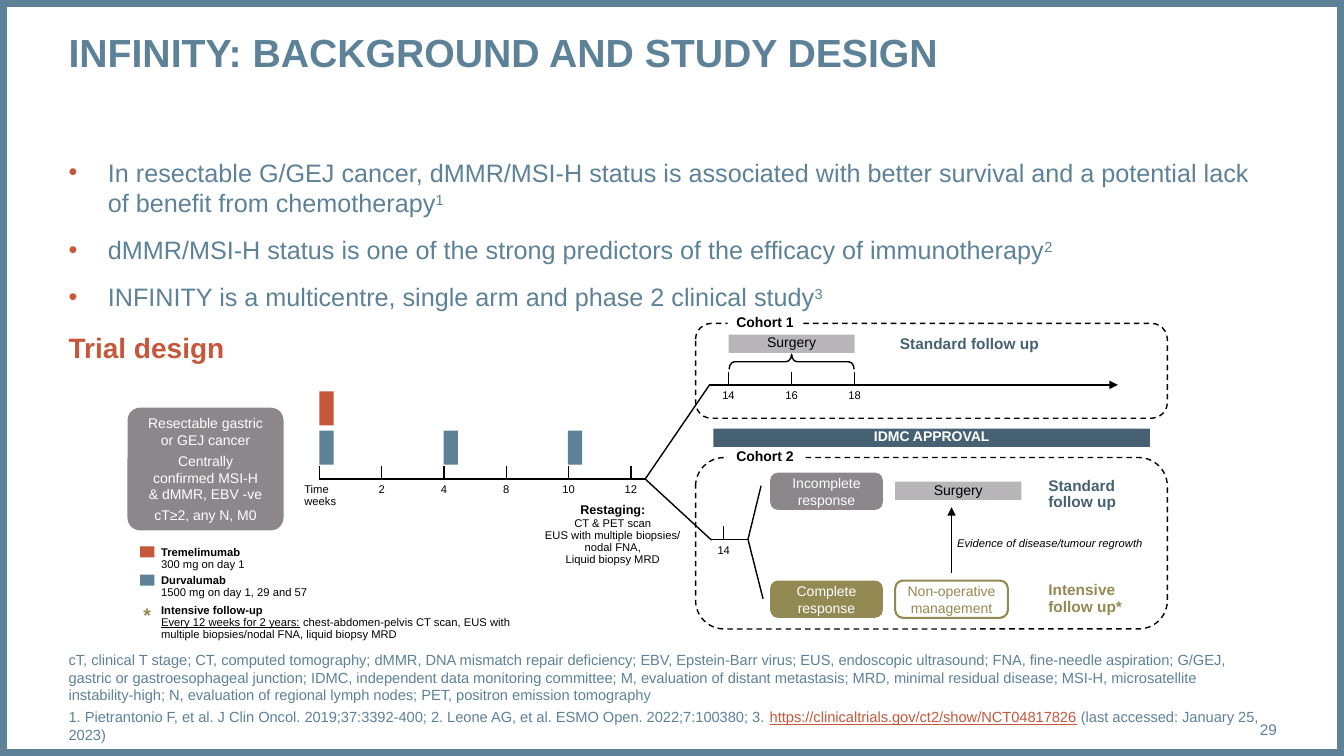
"""Build the INFINITY background and study design slide."""
from copy import deepcopy

from lxml import etree
from pptx import Presentation, util as u
from pptx.dml.color import RGBColor
from pptx.enum import dml, shapes, text
from pptx.oxml import ns

BLUE = RGBColor(0x5D, 0x82, 0x98)
NAVY = RGBColor(0x45, 0x61, 0x72)
RUST = RGBColor(0xC6, 0x57, 0x3B)
OLIVE = RGBColor(0x93, 0x89, 0x53)
GREY = RGBColor(0x8B, 0x87, 0x8B)
SILVER = RGBColor(0xB8, 0xB6, 0xB8)
BLACK = RGBColor(0, 0, 0)
WHITE = RGBColor(0xFF, 0xFF, 0xFF)

RECT = shapes.MSO_SHAPE.RECTANGLE
ROUND = shapes.MSO_SHAPE.ROUNDED_RECTANGLE
BRACE = shapes.MSO_SHAPE.RIGHT_BRACE
LEFT, CENTER, RIGHT = text.PP_ALIGN.LEFT, text.PP_ALIGN.CENTER, text.PP_ALIGN.RIGHT
MIDDLE = text.MSO_ANCHOR.MIDDLE

RAISED = {"raised": True}
BOLD, PLAIN = {"bold": True}, {}
SMALL = {"size": 8, "color": BLACK}
BODY = {"size": 18, "color": BLUE}
NOTE = {"size": 10.5, "color": BLUE}
BOX_TEXT = {"size": 10, "color": WHITE}
BAR_TEXT = {"size": 10, "color": BLACK}
HEADING = {"size": 11, "bold": True}
TIGHT = {"line_spacing": 0.9}
GAP = {"space_before": u.Pt(3)}

BULLETS = [
    [("In resectable G/GEJ cancer, dMMR/MSI-H status is associated with better survival "
      "and a potential lack of benefit from chemotherapy", PLAIN), ("1", RAISED)],
    [("dMMR/MSI-H status is one of the strong predictors of the efficacy of immunotherapy", PLAIN),
     ("2", RAISED)],
    [("INFINITY is a multicentre, single arm and phase 2 clinical study", PLAIN), ("3", RAISED)],
]
FOOTNOTES = [
    "cT, clinical T stage; CT, computed tomography; dMMR, DNA mismatch repair deficiency; EBV, "
    "Epstein-Barr virus; EUS, endoscopic ultrasound; FNA, fine-needle aspiration; G/GEJ, gastric or "
    "gastroesophageal junction; IDMC, independent data monitoring committee; M, evaluation of distant "
    "metastasis; MRD, minimal residual disease; MSI-H, microsatellite instability-high; N, evaluation "
    "of regional lymph nodes; PET, positron emission tomography",
    [("1. Pietrantonio F, et al. J Clin Oncol. 2019;37:3392-400; 2. Leone AG, et al. ESMO Open. "
      "2022;7:100380; 3. ", PLAIN),
     ("https://clinicaltrials.gov/ct2/show/NCT04817826", {"color": RUST, "underline": True}),
     (" (last accessed: January\u00a025, 2023)", PLAIN)],
]
ELIGIBILITY = ["Resectable gastric\nor GEJ cancer", "Centrally\nconfirmed MSI-H\n& dMMR, EBV -ve",
               "cT≥2, any N, M0"]
RESTAGING = [("Restaging:\n", {"size": 9, "bold": True}),
             ("CT & PET scan\nEUS with multiple biopsies/\nnodal FNA,\nLiquid biopsy MRD", PLAIN)]
LEGEND = [
    (13.77, [[("Tremelimumab", BOLD)], "300 mg on day 1"]),
    (14.48, [[("Durvalumab", BOLD)], "1500 mg on day 1, 29 and 57"]),
    (15.24, [[("Intensive follow-up", BOLD)],
             [("Every 12 weeks for 2 years:", {"underline": True}),
              (" chest-abdomen-pelvis CT scan, EUS with\nmultiple biopsies/nodal FNA, "
               "liquid biopsy MRD", PLAIN)]]),
]
AXIS, UPPER, LOWER = 12.07, 9.7, 13.59
TIMELINES = [
    (["", "2", "4", "8", "10", "12"], 8.05, 1.57, AXIS),
    (["14", "16", "18"], 18.36, 1.59, UPPER),
    (["14"], 18.24, 0, LOWER),
]
LINES = [
    (8.03, AXIS, 16.26, AXIS), (16.26, AXIS, 17.88, UPPER), (16.26, AXIS, 17.93, 13.61),
    (17.91, LOWER, 18.85, LOWER), (18.85, LOWER, 19.18, 12.24), (18.85, LOWER, 19.23, 15.09),
]
ARROWS = [(17.86, UPPER, 28.17, UPPER), (23.98, 14.45, 23.98, 12.78)]
COHORTS = [("Cohort 1", 8.15, 2.39), ("Cohort 2", 11.53, 4.32)]
DOSES = [(8.05, 9.86, RUST)] + [(8.05 + 3.13 * n, 10.85, BLUE) for n in range(3)]
BARS = [
    ("Surgery", (18.36, 8.43, 3.18, 0.46), SILVER, BAR_TEXT),
    ("IDMC APPROVAL", (17.98, 10.8, 11, 0.46), NAVY, {**BOX_TEXT, **BOLD}),
    ("Surgery", (22.56, 12.14, 3.18, 0.46), SILVER, BAR_TEXT),
]
RESPONSES = [
    ("Incomplete\nresponse", 19.41, 11.91, GREY, None, WHITE),
    ("Complete\nresponse", 19.41, 14.63, OLIVE, None, WHITE),
    ("Non-operative\nmanagement", 22.56, 14.63, WHITE, OLIVE, OLIVE),
]
FOLLOW_UPS = [("Standard follow up", 22.68, 8.48, NAVY), ("Standard \nfollow up", 26.42, 12.04, NAVY),
              ("Intensive\nfollow up*", 26.42, 14.68, OLIVE)]

deck = Presentation()
deck.slide_width, deck.slide_height = u.Cm(33.87), u.Cm(19.05)
page = deck.slides.add_slide(deck.slide_layouts[6])


def add_span(para, words, style):
    style = {"name": "Arial", "bold": False, **style}
    color, raised = style.pop("color"), style.pop("raised", False)
    style["size"] = u.Pt(style["size"])
    for index, line in enumerate(words.split("\n")):
        if index:
            para.add_line_break()
            para._p[-1].append(deepcopy(span._r.rPr))
        span = para.add_run()
        span.text = line
        for key, value in style.items():
            setattr(span.font, key, value)
        span.font.color.rgb = color
        if raised:
            span._r.rPr.set("baseline", "30000")


def write(box, paras, style, align=LEFT, later=PLAIN, insets=(0, 0, 0, 0), anchor=text.MSO_ANCHOR.TOP,
          wrap=True, **layout):
    frame = box.text_frame
    frame.word_wrap, frame.vertical_anchor = wrap, anchor
    for side, inset in zip(("left", "top", "right", "bottom"), insets):
        setattr(frame, f"margin_{side}", u.Cm(inset))
    for index, spans in enumerate(paras):
        para = frame.add_paragraph() if index else frame.paragraphs[0]
        for key, value in {"alignment": align, **layout, **(later if index else {})}.items():
            setattr(para, key, value)
        for words, changes in [(spans, PLAIN)] if isinstance(spans, str) else spans:
            add_span(para, words, {**style, **changes})
    return box


def add_text(place, paras, style, **options):
    return write(page.shapes.add_textbox(*map(u.Cm, place)), paras, style, **options)


def add_box(kind, place, fill=None, line=None, width=1, corner=None):
    box = page.shapes.add_shape(kind, *map(u.Cm, place))
    box.shadow.inherit = False
    for part, color in ((box.fill, fill), (box.line.fill, line)):
        if color is None:
            part.background()
        else:
            part.solid()
            part.fore_color.rgb = color
    if line is not None:
        box.line.width = u.Pt(width)
    if corner is not None:
        box.adjustments[0] = corner
    return box


def add_line(ends, arrow=False):
    line = page.shapes.add_connector(shapes.MSO_CONNECTOR.STRAIGHT, *map(u.Cm, ends))
    line.line.color.rgb, line.line.width = BLACK, u.Pt(1)
    if arrow:
        etree.SubElement(line.line._get_or_add_ln(), ns.qn("a:tailEnd"), type="triangle")
    etree.SubElement(line._element.spPr, ns.qn("a:effectLst"))


def add_bullet(para):
    props = para._p.get_or_add_pPr()
    props.set("marL", str(u.Cm(0.99)))
    props.set("indent", str(-u.Cm(0.99)))
    color = etree.SubElement(props, ns.qn("a:buClr"))
    etree.SubElement(color, ns.qn("a:srgbClr"), val=str(RUST))
    etree.SubElement(props, ns.qn("a:buFont"), typeface="Arial")
    etree.SubElement(props, ns.qn("a:buChar"), char="•")


add_box(RECT, (0, 0, 33.87, 19.05), line=BLUE, width=10)
add_text((1.73, 0.71, 30.45, 2.39), ["INFINITY: BACKGROUND AND STUDY DESIGN"],
         {"size": 28, "bold": True, "color": BLUE})
body = add_text((1.73, 3.96, 30.45, 4.37), BULLETS, BODY, later={"space_before": u.Pt(12)})
for para in body.text_frame.paragraphs:
    add_bullet(para)
add_text((30, 17.86, 2.18, 1.02), ["29"], {"size": 11, "color": BLUE}, align=RIGHT, anchor=MIDDLE)
add_text((1.73, 17.15, 30.07, 0.84), FOOTNOTES, NOTE, anchor=MIDDLE,
         later={"space_before": u.Pt(3), "space_after": u.Pt(3)})
add_text((1.73, 8.2, 4.4, 1.12), ["Trial design"], {"size": 20, "bold": True, "color": RUST},
         insets=(0, 0.13, 0.25, 0.13))

for ends in LINES:
    add_line(ends)
for ends in ARROWS:
    add_line(ends, arrow=True)
for labels, start, step, axis in TIMELINES:
    for index, label in enumerate(labels):
        tick = start + step * index
        add_line((tick, axis, tick, axis - 0.33))
        if label:
            add_text((tick - 0.17, axis + 0.13, 0.34, 0.3), [label], SMALL, align=CENTER, wrap=False, **TIGHT)
add_text((7.67, 12.19, 1.1, 0.61), ["Time\nweeks"], SMALL, **TIGHT)
add_text((13.72, 12.7, 3.45, 1.57), [RESTAGING], SMALL, align=CENTER, wrap=False, **TIGHT)
add_text((24.1, 13.56, 4.72, 0.3), ["Evidence of disease/tumour regrowth"], {**SMALL, "italic": True},
         align=CENTER, wrap=False, **TIGHT)

for left, top, color in DOSES:
    add_box(RECT, (left, top, 0.36, 0.86), color)
for (top, paras), color in zip(LEGEND, (RUST, BLUE, None)):
    add_text((4.06, top, 9.2, 0.61), paras, SMALL, **TIGHT)
    if color is not None:
        add_box(RECT, (3.53, top, 0.36, 0.28), color)
add_text((3.61, 15.27, 0.2, 0.53), ["*"], {"size": 14, "bold": True, "color": OLIVE}, align=CENTER,
         wrap=False, **TIGHT)

write(add_box(ROUND, (3.25, 10.31, 3.86, 3.02), GREY, GREY, 2, 0.093), ELIGIBILITY, BOX_TEXT,
      align=CENTER, later=GAP, insets=(0.2, 0.13, 0.2, 0.13), anchor=MIDDLE)
for name, top, height in COHORTS:
    frame = add_box(ROUND, (17.53, top, 11.89, height), line=BLACK, corner=0.167)
    frame.line.dash_style = dml.MSO_LINE.DASH
    write(add_box(RECT, (18.34, top - 0.2, 1.88, 0.38), WHITE), [name], {**BAR_TEXT, **BOLD},
          align=CENTER, wrap=False, **TIGHT)
brace = add_box(BRACE, (19.76, 7.54, 0.38, 3.15), line=BLACK, corner=0.365)
brace.rotation = 270
for words, place, color, style in BARS:
    write(add_box(ROUND, place, color, corner=0), [words], style, align=CENTER,
          insets=(0.2, 0.13, 0.2, 0.2), anchor=MIDDLE)
for words, left, top, fill, line, color in RESPONSES:
    write(add_box(ROUND, (left, top, 2.84, 0.94), fill, line, 1.5, 0.21), [words],
          {"size": 10, "color": color}, align=CENTER, insets=(0.2, 0.13, 0.2, 0.13), anchor=MIDDLE)
for words, left, top, color in FOLLOW_UPS:
    add_text((left, top, 3.8, 0.84), [words], {**HEADING, "color": color}, **TIGHT)

deck.save("out.pptx")
